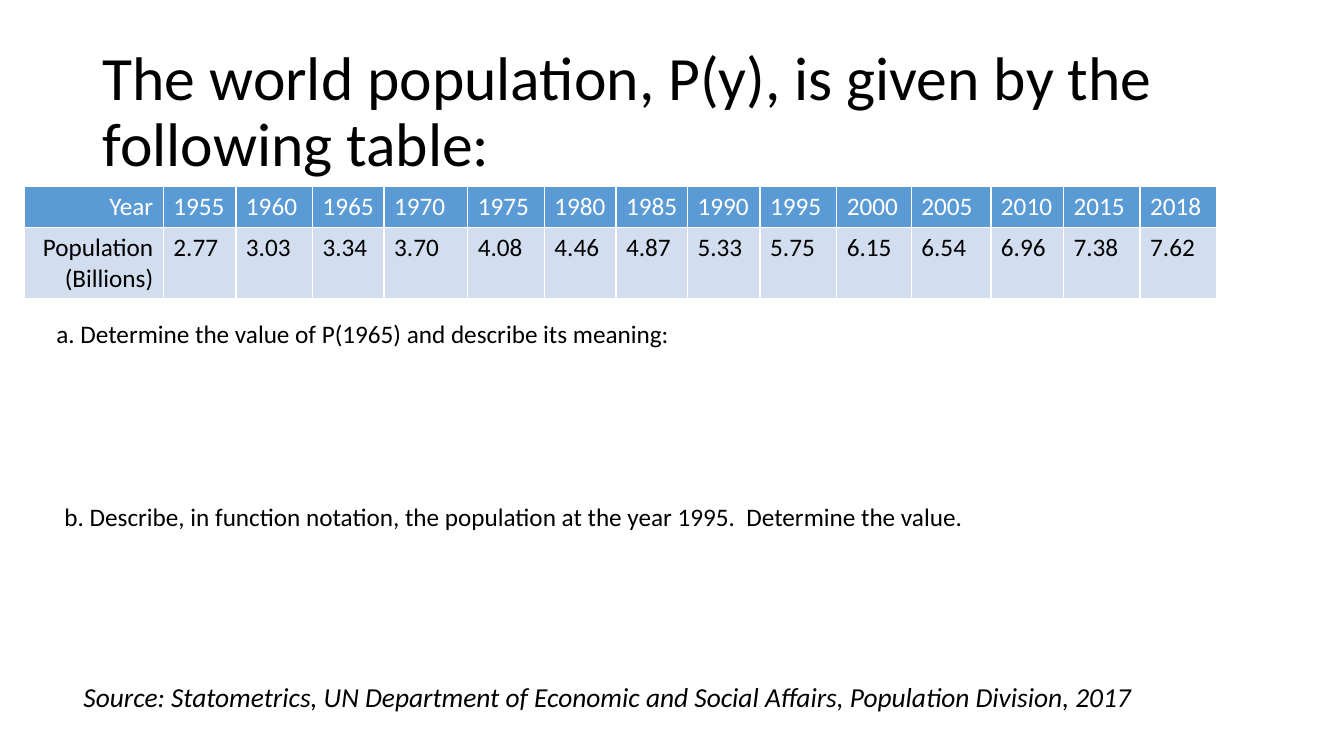
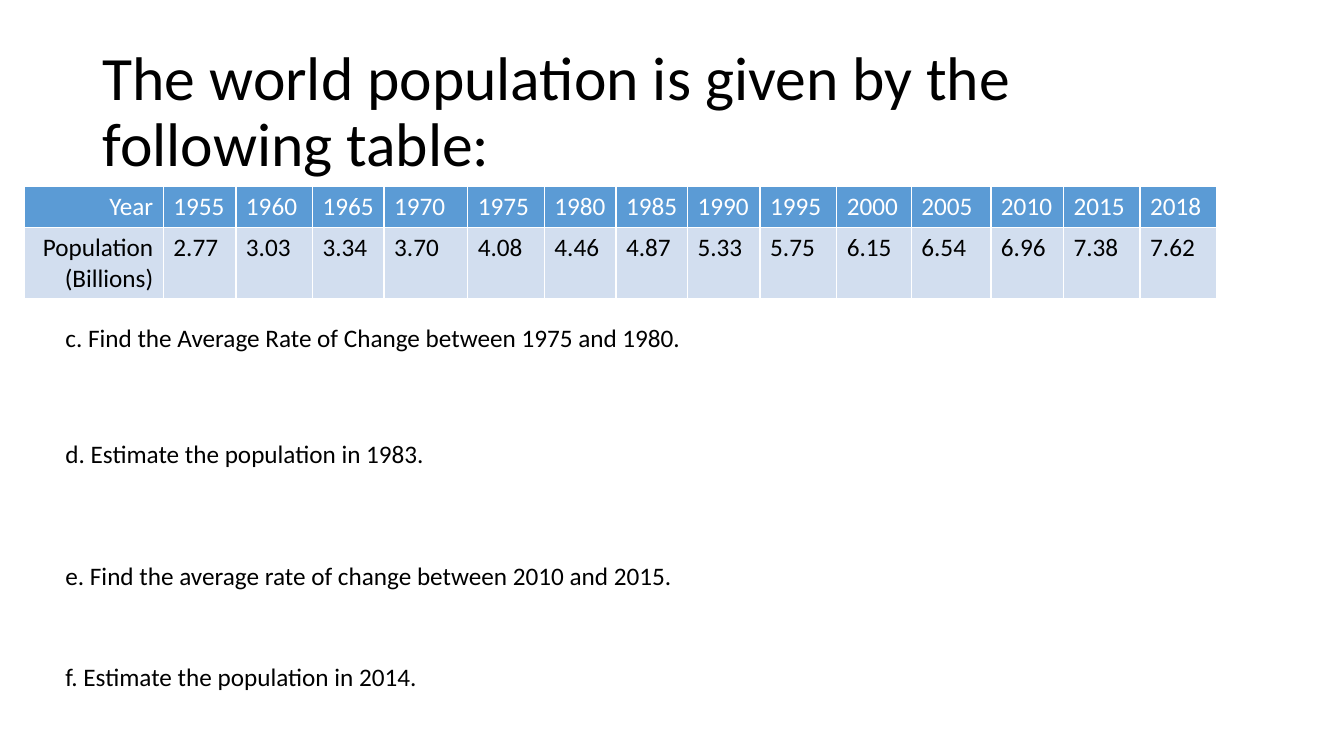
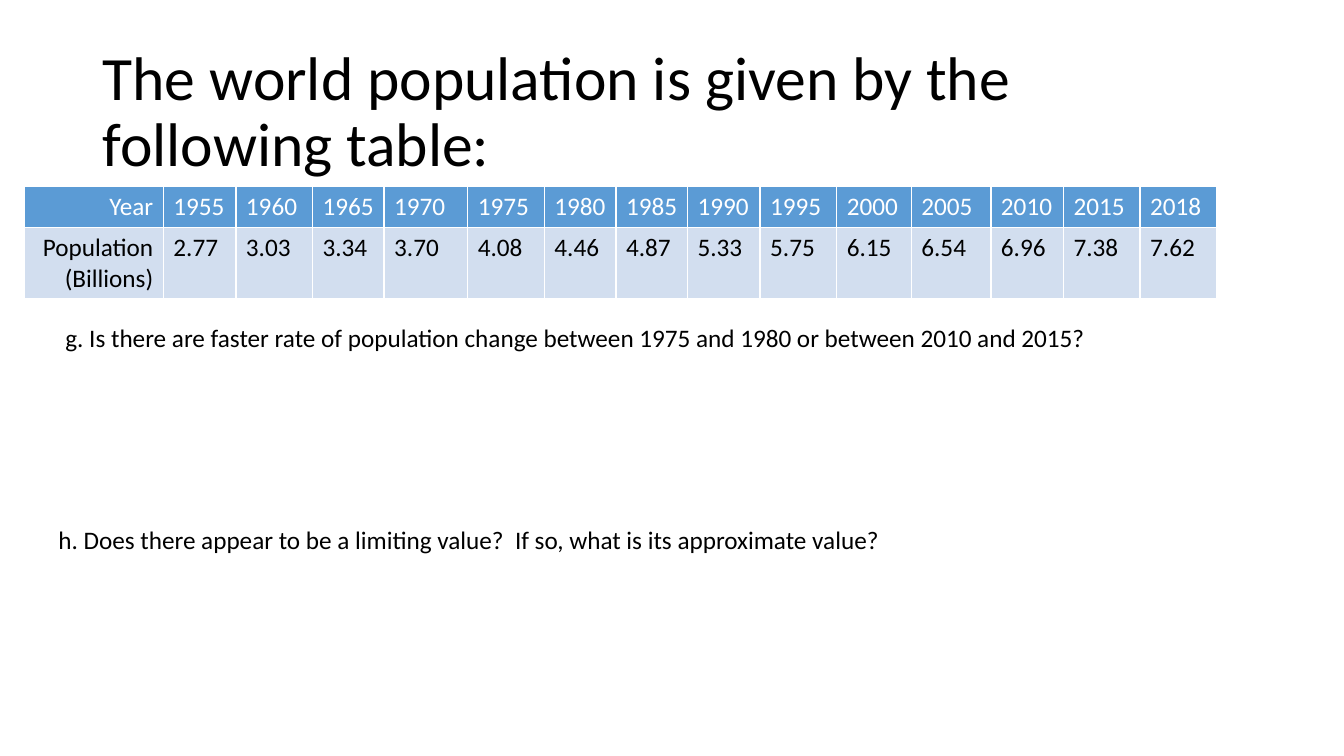
from dataclasses import dataclass

from lxml import etree
from pptx import Presentation
from pptx import util as u
from pptx.dml.color import RGBColor
from pptx.enum import text
from pptx.oxml import ns


@dataclass(frozen=True)
class Theme:
    font: str = "Calibri"
    ink: str = "000000"
    paper: str = "FFFFFF"
    head: str = "5B9BD5"
    band: str = "D2DEEF"
    title: float = 44
    note: float = 19.6
    body: float = 18
    rule: float = 1


WIDTHS = [1.38, 0.72, 0.76, 0.71, 0.83, 0.76, 0.71, 0.71,
          0.72, 0.76, 0.74, 0.79, 0.72, 0.76, 0.76]
HEIGHTS = [0.41, 0.7]
ROWS = [
    ["Year", *map(str, range(1955, 2016, 5)), "2018"],
    ["Population (Billions)", "2.77", "3.03", "3.34", "3.70", "4.08", "4.46", "4.87",
     "5.33", "5.75", "6.15", "6.54", "6.96", "7.38", "7.62"],
]
SHORT = "The world population is given by the following table:"
PAGES = [
    ("The world population, P(y), is given by the following table:",
     [(0.46, 3.11, 11.21, "a. Determine the value of P(1965) and describe its meaning:"),
      (0.54, 4.92, 11.21, "b. Describe, in function notation, the population at the year 1995.  "
                          "Determine the value.")],
     "Source: Statometrics, UN Department of Economic and Social Affairs, "
     "Population Division, 2017"),
    (SHORT,
     [(0.55, 3.15, 11.32, "c. Find the Average Rate of Change between 1975 and 1980."),
      (0.55, 4.3, 11.32, "d. Estimate the population in 1983."),
      (0.55, 5.51, 11.32, "e. Find the average rate of change between 2010 and 2015."),
      (0.55, 6.51, 11.32, "f. Estimate the population in 2014.")],
     None),
    (SHORT,
     [(0.55, 3.15, 11.32, "g. Is there are faster rate of population change between "
                          "1975 and 1980 or between 2010 and 2015?"),
      (0.48, 5.15, 11.32, "h. Does there appear to be a limiting value?  "
                          "If so, what is its approximate value?")],
     None),
]


def apply(item, values):
    for name, value in values.items():
        setattr(item, name, value)


class Deck:
    def __init__(self, theme):
        self.theme = theme
        self.show = Presentation()
        apply(self.show, {"slide_width": u.Inches(13.33), "slide_height": u.Inches(7.5)})
        self.slide = None

    def page(self):
        self.slide = self.show.slides.add_slide(self.show.slide_layouts[6])

    def label(self, frame, words, size, color, para=None, **font):
        line = frame.paragraphs[0]
        apply(line, para or {})
        run = line.add_run()
        run.text = words
        apply(run.font, {"name": self.theme.font, "size": u.Pt(size), **font})
        run.font.color.rgb = RGBColor.from_string(color)

    def box(self, place, words, size, frame=None, para=None, **font):
        area = self.slide.shapes.add_textbox(*map(u.Inches, place)).text_frame
        apply(area, {"word_wrap": True, **(frame or {})})
        self.label(area, words, size, self.theme.ink, para, **font)

    def title(self, words):
        self.box((0.92, 0.4, 11.5, 1.45), words, self.theme.title,
                 {"vertical_anchor": text.MSO_ANCHOR.MIDDLE}, {"line_spacing": 0.9})

    def note(self, words):
        self.box((0.73, 6.79, 11.5, 0.44), words, self.theme.note,
                 para={"line_spacing": 0.7, "space_before": u.Pt(10)}, italic=True)

    def ask(self, left, top, width, words):
        self.box((left, top, width, 0.4), words, self.theme.body,
                 {"auto_size": text.MSO_AUTO_SIZE.SHAPE_TO_FIT_TEXT})

    def edge(self, cell):
        props = cell._tc.get_or_add_tcPr()
        for side in ("lnL", "lnR", "lnT", "lnB"):
            line = etree.SubElement(props, ns.qn(f"a:{side}"), w=str(u.Pt(self.theme.rule)))
            fill = etree.SubElement(line, ns.qn("a:solidFill"))
            etree.SubElement(fill, ns.qn("a:srgbClr"), val=self.theme.paper)

    def table(self):
        look = self.theme
        size = map(u.Inches, (0.24, 1.85, sum(WIDTHS), sum(HEIGHTS)))
        grid = self.slide.shapes.add_table(len(ROWS), len(WIDTHS), *size).table
        for col, width in zip(grid.columns, WIDTHS):
            col.width = u.Inches(width)
        styles = [(look.head, look.paper), (look.band, look.ink)]
        for row, tall, words, (fill, ink) in zip(grid.rows, HEIGHTS, ROWS, styles):
            row.height = u.Inches(tall)
            for spot, (cell, word) in enumerate(zip(row.cells, words)):
                self.edge(cell)
                cell.fill.solid()
                cell.fill.fore_color.rgb = RGBColor.from_string(fill)
                side = text.PP_ALIGN.LEFT if spot else text.PP_ALIGN.RIGHT
                self.label(cell.text_frame, word, look.body, ink,
                           {"alignment": side}, bold=False)


def main():
    deck = Deck(Theme())
    for title, asks, note in PAGES:
        deck.page()
        deck.title(title)
        if note:
            deck.note(note)
        deck.table()
        for ask in asks:
            deck.ask(*ask)
    deck.show.save("out.pptx")


if __name__ == "__main__":
    main()
